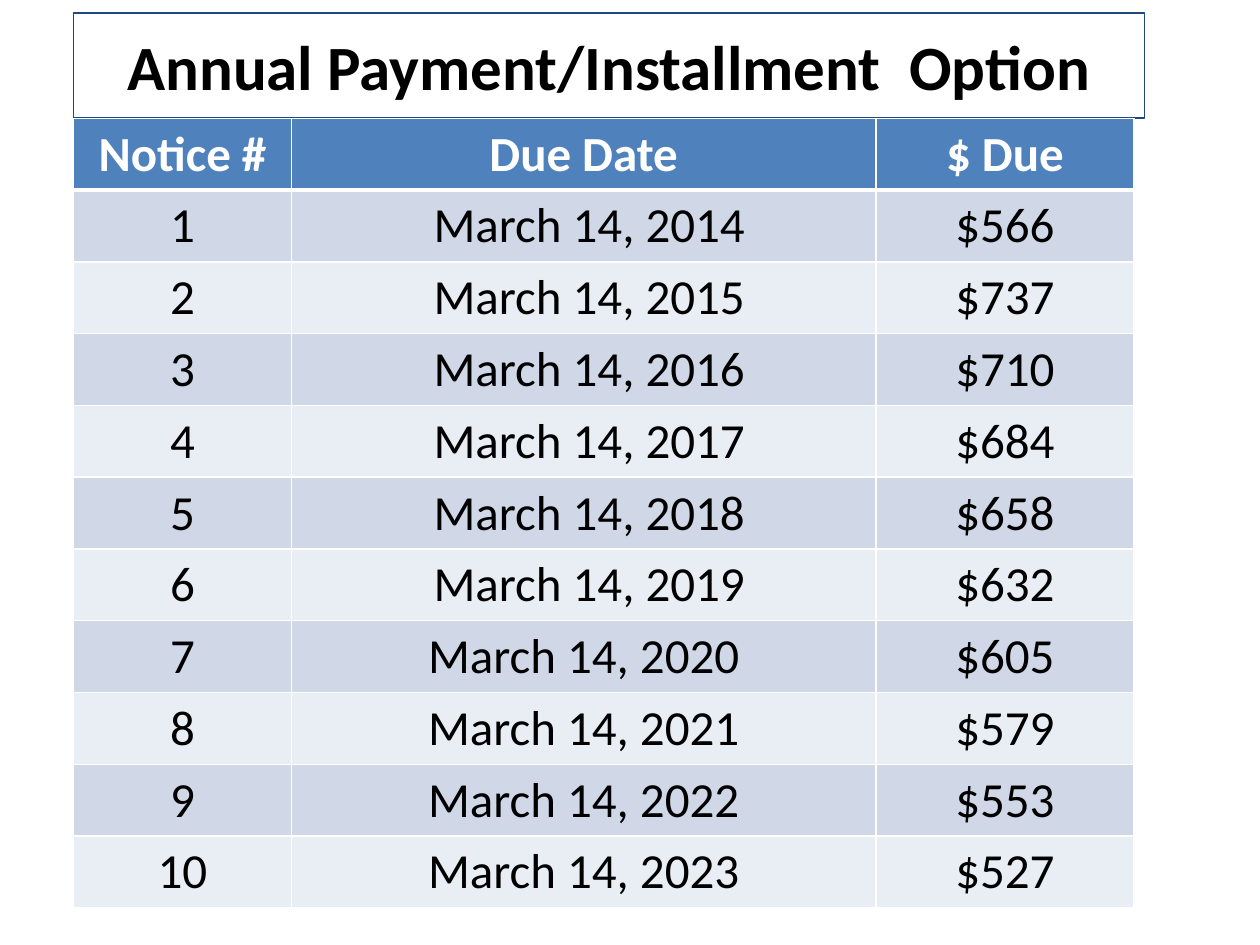
from lxml.etree import SubElement
from pptx import Presentation
from pptx.dml.color import RGBColor
from pptx.enum.text import MSO_ANCHOR as Anchor, MSO_AUTO_SIZE as AutoSize, PP_ALIGN as Align
from pptx.oxml.ns import qn
from pptx.util import Pt

AMOUNTS = [566, 737, 710, 684, 658, 632, 605, 579, 553, 527]
FIRST_YEAR = 2014
COLUMN_WIDTHS = [124.5, 334, 147.5]
HEADER_HEIGHT, ROW_HEIGHT = 28.8, 41.04
BODY_FILLS = ["D0D8E8", "E9EDF4"]


def color(value):
    """Turn a hex string into a colour."""
    return RGBColor.from_string(value)


def write_text(frame, text, size, text_color, bold):
    """Write one centred line of text into a text frame."""
    paragraph = frame.paragraphs[0]
    paragraph.alignment = Align.CENTER
    run = paragraph.add_run()
    run.text = text
    font_format = {"name": "Calibri", "size": Pt(size), "bold": bold}
    for name, value in font_format.items():
        setattr(run.font, name, value)
    run.font.color.rgb = color(text_color)


def set_borders(cell, widths):
    """Draw white borders of the given widths around a cell."""
    properties = cell._tc.get_or_add_tcPr()
    for side, width in widths.items():
        line = SubElement(properties, qn(f"a:ln{side}"), w=str(Pt(width)))
        fill = SubElement(line, qn("a:solidFill"))
        SubElement(fill, qn("a:srgbClr"), val="FFFFFF")


def add_title(slide, left, top, width, height):
    """Place the outlined title in its box."""
    title = slide.shapes.title
    box = {"left": left, "top": top, "width": width, "height": height}
    for name, value in box.items():
        setattr(title, name, Pt(value))
    title.line.color.rgb = color("1F497D")
    title.line.width = Pt(0.75)
    frame_format = {
        "word_wrap": True,
        "auto_size": AutoSize.SHAPE_TO_FIT_TEXT,
        "vertical_anchor": Anchor.MIDDLE,
    }
    for name, value in frame_format.items():
        setattr(title.text_frame, name, value)
    write_text(title.text_frame, "Annual Payment/Installment  Option", 36, "000000", True)


def payment_rows():
    """Return the header and one row for each yearly notice."""
    rows = [["Notice #", "Due Date", "$ Due"]]
    for index, amount in enumerate(AMOUNTS):
        year = FIRST_YEAR + index
        lead = " " if year < 2020 else ""
        rows.append([str(index + 1), f"{lead}March 14, {year}", f"${amount}"])
    return rows


def add_payment_table(slide, left, top, width, height):
    """Place the payment schedule in its box."""
    rows = payment_rows()
    table = slide.shapes.add_table(
        len(rows), len(COLUMN_WIDTHS), Pt(left), Pt(top), Pt(width), Pt(height)
    ).table
    for column, column_width in zip(table.columns, COLUMN_WIDTHS):
        column.width = Pt(column_width)
    for row_index, values in enumerate(rows):
        header = row_index == 0
        table.rows[row_index].height = Pt(HEADER_HEIGHT if header else ROW_HEIGHT)
        fill_color = "4F81BD" if header else BODY_FILLS[(row_index - 1) % 2]
        text_color = "FFFFFF" if header else "000000"
        top_width = 3 if row_index == 1 else 1
        borders = {"L": 1, "R": 1, "T": top_width, "B": 3 if header else 1}
        for column_index, text in enumerate(values):
            cell = table.cell(row_index, column_index)
            set_borders(cell, borders)
            cell.fill.solid()
            cell.fill.fore_color.rgb = color(fill_color)
            write_text(cell.text_frame, text, 28, text_color, header)


def main():
    """Build and save the slide."""
    presentation = Presentation()
    presentation.slide_width, presentation.slide_height = Pt(720), Pt(540)
    slide = presentation.slides.add_slide(presentation.slide_layouts[5])
    add_title(slide, 42, 12, 612, 51)
    add_payment_table(slide, 42, 67.75, sum(COLUMN_WIDTHS), 453.6)
    presentation.save("out.pptx")


if __name__ == "__main__":
    main()
